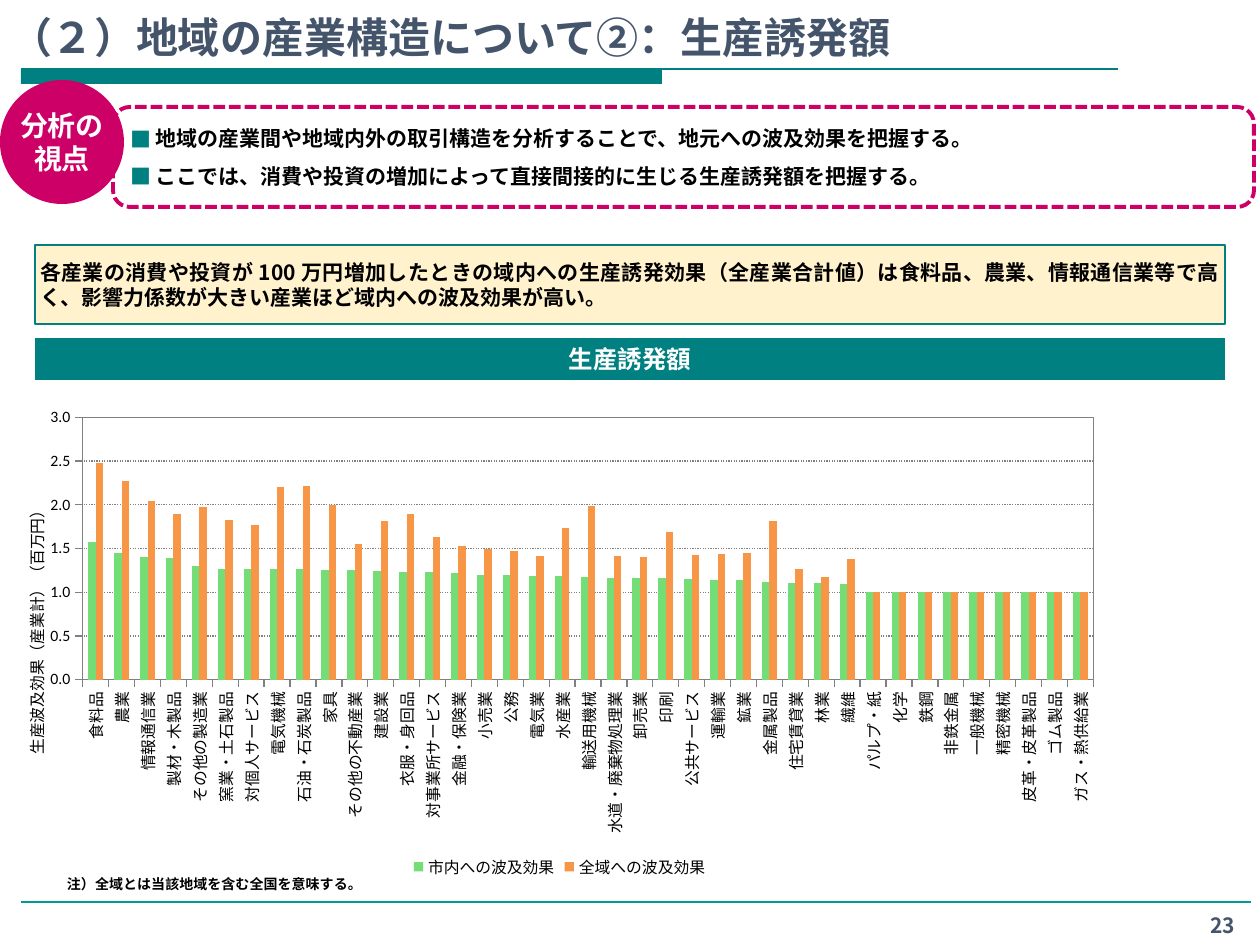
import lxml.etree
import pptx
import pptx.chart.data
import pptx.dml.color
import pptx.enum.chart
import pptx.enum.dml
import pptx.enum.shapes
import pptx.enum.text
import pptx.oxml.ns
import pptx.util

RGB = pptx.dml.color.RGBColor
Align = pptx.enum.text.PP_ALIGN
Anchor = pptx.enum.text.MSO_ANCHOR
Shape = pptx.enum.shapes.MSO_SHAPE
Dash = pptx.enum.dml.MSO_LINE
Pt = pptx.util.Pt
qn = pptx.oxml.ns.qn

TITLE = "（２）地域の産業構造について②：生産誘発額"
BADGE = "分析の\v視点"
VIEWPOINTS = [
    "地域の産業間や地域内外の取引構造を分析することで、地元への波及効果を把握する。",
    "ここでは、消費や投資の増加によって直接間接的に生じる生産誘発額を把握する。",
]
FINDING = ("各産業の消費や投資が100万円増加したときの域内への生産誘発効果（全産業合計値）は"
           "食料品、農業、情報通信業等で高く、影響力係数が大きい産業ほど域内への波及効果が高い。")
CHART_HEADING = "生産誘発額"
FOOTNOTE = "注）全域とは当該地域を含む全国を意味する。"
PAGE_NUMBER = "23"
AXIS_TITLE = "生産波及効果（産業計）（百万円）"
SERIES_NAMES = ["市内への波及効果", "全域への波及効果"]
INDUSTRIES = [
    ("食料品", 1.58, 2.48), ("農業", 1.45, 2.27), ("情報通信業", 1.40, 2.04),
    ("製材・木製品", 1.39, 1.90), ("その他の製造業", 1.30, 1.97), ("窯業・土石製品", 1.27, 1.83),
    ("対個人サービス", 1.27, 1.77), ("電気機械", 1.27, 2.20), ("石油・石炭製品", 1.26, 2.21),
    ("家具", 1.25, 2.00), ("その他の不動産業", 1.25, 1.55), ("建設業", 1.24, 1.82),
    ("衣服・身回品", 1.23, 1.89), ("対事業所サービス", 1.23, 1.63), ("金融・保険業", 1.22, 1.53),
    ("小売業", 1.20, 1.49), ("公務", 1.20, 1.47), ("電気業", 1.19, 1.41),
    ("水産業", 1.19, 1.73), ("輸送用機械", 1.17, 1.99), ("水道・廃棄物処理業", 1.16, 1.41),
    ("卸売業", 1.16, 1.40), ("印刷", 1.16, 1.69), ("公共サービス", 1.15, 1.43),
    ("運輸業", 1.14, 1.44), ("鉱業", 1.14, 1.45), ("金属製品", 1.12, 1.82),
    ("住宅賃貸業", 1.11, 1.26), ("林業", 1.11, 1.17), ("繊維", 1.09, 1.38),
] + [(name, 1, 1) for name in (
    "パルプ・紙", "化学", "鉄鋼", "非鉄金属", "一般機械", "精密機械",
    "皮革・皮革製品", "ゴム製品", "ガス・熱供給業")]

FONT, CHART_FONT = "Noto Sans CJK JP", "Calibri"
TEAL, RULE_TEAL = RGB(0, 0x80, 0x80), RGB(0, 0x99, 0x99)
PINK, CREAM = RGB(0xCC, 0, 0x66), RGB(0xFF, 0xF2, 0xCC)
SLATE, GRAY = RGB(0x44, 0x54, 0x6A), RGB(0x80, 0x80, 0x80)
BLACK, WHITE = RGB(0, 0, 0), RGB(0xFF, 0xFF, 0xFF)
SERIES_COLORS = [RGB(0x75, 0xDD, 0x75), RGB(0xF7, 0x96, 0x46)]


def px(count):
    return round(count * 914400 / 126)


def write(box, *texts, size, color=BLACK, align=Align.LEFT, anchor=Anchor.TOP,
          margins=(13, 6), wrap=True, bullet=None):
    """Fill a box with bold paragraphs; margins are (sides, top and bottom) in px."""
    frame = box.text_frame
    frame.auto_size = pptx.enum.text.MSO_AUTO_SIZE.NONE
    frame.word_wrap, frame.vertical_anchor = wrap, anchor
    frame.margin_left = frame.margin_right = px(margins[0])
    frame.margin_top = frame.margin_bottom = px(margins[1])
    for index, text in enumerate(texts):
        para = frame.add_paragraph() if index else frame.paragraphs[0]
        para.text, para.alignment = text, align
        if bullet:
            add_bullet(para, bullet)
            para.space_before, para.space_after = Pt(3 if index else 0), Pt(4)
        for span in para.runs:
            span.font.size, span.font.bold = Pt(size), True
            span.font.name, span.font.color.rgb = FONT, color
            latin = span._r.get_or_add_rPr().find(qn("a:latin"))
            east_asian = lxml.etree.Element(qn("a:ea"), typeface=FONT)
            latin.addnext(east_asian)


def add_bullet(para, bullet):
    properties = para._p.get_or_add_pPr()
    properties.set("marL", str(px(25)))
    properties.set("indent", str(-px(25)))
    color = lxml.etree.SubElement(properties, qn("a:buClr"))
    lxml.etree.SubElement(color, qn("a:srgbClr"), val=str(TEAL))
    lxml.etree.SubElement(properties, qn("a:buFont"), typeface=FONT)
    lxml.etree.SubElement(properties, qn("a:buChar"), char=bullet)


def add_block(page, kind, place, fill=None, line=None, width=1, dash=None):
    block = page.shapes.add_shape(kind, *map(px, place))
    block.shadow.inherit = False
    if fill is None:
        block.fill.background()
    else:
        block.fill.solid()
        block.fill.fore_color.rgb = fill
    if line is None:
        block.line.fill.background()
    else:
        block.line.color.rgb, block.line.width = line, Pt(width)
        if dash:
            block.line.dash_style = dash
    return block


def add_rule(page, left, right, y, color):
    rule = page.shapes.add_connector(
        pptx.enum.shapes.MSO_CONNECTOR.STRAIGHT, px(left), px(y), px(right), px(y))
    rule.line.color.rgb, rule.line.width = color, Pt(0.75)
    lxml.etree.SubElement(rule._element.spPr, qn("a:effectLst"))


def set_layout(parent, index, **values):
    """Give a chart part a manual layout, as child number index if it has none."""
    layout = parent.find(qn("c:layout"))
    if layout is None:
        layout = lxml.etree.Element(qn("c:layout"))
        parent.insert(index, layout)
    manual = lxml.etree.SubElement(layout, qn("c:manualLayout"))
    for name, value in values.items():
        lxml.etree.SubElement(manual, qn("c:" + name), val=str(value))


def add_effect_chart(page, place):
    data = pptx.chart.data.CategoryChartData(number_format="0.00")
    names, *columns = zip(*INDUSTRIES)
    data.categories = names
    for name, values in zip(SERIES_NAMES, columns):
        data.add_series(name, values)
    kinds = pptx.enum.chart
    chart = page.shapes.add_chart(
        kinds.XL_CHART_TYPE.COLUMN_CLUSTERED, *map(px, place), data).chart
    chart.has_title = False
    chart.font.name, chart.font.size, chart.font.color.rgb = CHART_FONT, Pt(10), BLACK
    chart.has_legend = True
    chart.legend.position = kinds.XL_LEGEND_POSITION.BOTTOM
    chart.legend.include_in_layout = False
    chart.legend.font.size = Pt(9)

    plot = chart.plots[0]
    plot.gap_width, plot.overlap, plot.vary_by_categories = 150, 0, False
    for series, color in zip(plot.series, SERIES_COLORS):
        series.format.fill.solid()
        series.format.fill.fore_color.rgb = color

    category, value = chart.category_axis, chart.value_axis
    for axis in (category, value):
        axis.major_tick_mark = kinds.XL_TICK_MARK.OUTSIDE
        axis.tick_labels.font.size = Pt(9)
        axis.format.line.color.rgb, axis.format.line.width = GRAY, Pt(0.75)
    category._element.find(qn("c:txPr")).find(qn("a:bodyPr")).set("rot", "-5400000")
    skip = lxml.etree.Element(qn("c:tickLblSkip"), val="1")
    category._element.find(qn("c:noMultiLvlLbl")).addprevious(skip)

    value.minimum_scale, value.maximum_scale, value.major_unit = 0, 3, 0.5
    value.tick_labels.number_format = "0.0;0.0"
    value.tick_labels.number_format_is_linked = False
    grid = value.major_gridlines.format.line
    grid.color.rgb, grid.width, grid.dash_style = GRAY, Pt(0.75), Dash.ROUND_DOT
    para = value.axis_title.text_frame.paragraphs[0]
    span = para.add_run()
    span.text = AXIS_TITLE
    span.font.size, span.font.bold, span.font.name = Pt(9), False, CHART_FONT
    set_layout(value.axis_title._element, 1, xMode="edge", yMode="edge", x=0.01, y=0.21)

    area = chart._chartSpace.chart.plotArea
    set_layout(area, 0, layoutTarget="inner", xMode="edge", yMode="edge",
               x=0.067, y=0.04, w=0.918, h=0.541)
    frame = lxml.etree.SubElement(area, qn("c:spPr"))
    lxml.etree.SubElement(frame, qn("a:noFill"))
    border = lxml.etree.SubElement(frame, qn("a:ln"), w=str(Pt(0.75)))
    fill = lxml.etree.SubElement(border, qn("a:solidFill"))
    lxml.etree.SubElement(fill, qn("a:srgbClr"), val=str(GRAY))


def main():
    deck = pptx.Presentation()
    deck.slide_width, deck.slide_height = px(1260), px(945)
    page = deck.slides.add_slide(deck.slide_layouts[5])

    title = page.shapes.title
    title.left, title.top, title.width, title.height = map(px, (-3, 0, 1263, 68))
    write(title, TITLE, size=24, color=SLATE, anchor=Anchor.BOTTOM)
    add_block(page, Shape.RECTANGLE, (21, 69, 641, 15), fill=TEAL)
    add_rule(page, 21, 1118, 69, TEAL)
    add_rule(page, 21, 1251, 902, RULE_TEAL)

    add_effect_chart(page, (9, 398, 1101, 485))

    heading = add_block(page, Shape.RECTANGLE, (35, 338, 1190, 42), fill=TEAL)
    write(heading, CHART_HEADING, size=14, color=WHITE, align=Align.CENTER, anchor=Anchor.MIDDLE)
    finding = add_block(page, Shape.RECTANGLE, (35, 245, 1190, 79), fill=CREAM, line=TEAL)
    write(finding, FINDING, size=12, align=Align.JUSTIFY, anchor=Anchor.MIDDLE, margins=(5, 6))

    footnote = page.shapes.add_textbox(*map(px, (54, 870, 353, 30)))
    write(footnote, FOOTNOTE, size=8)
    number = page.shapes.add_textbox(*map(px, (1185, 907, 75, 36)))
    write(number, PAGE_NUMBER, size=12, color=SLATE, align=Align.CENTER)

    viewpoints = add_block(page, Shape.ROUNDED_RECTANGLE, (113, 107, 1141, 100),
                           line=PINK, width=2.25, dash=Dash.SQUARE_DOT)
    write(viewpoints, *VIEWPOINTS, size=12, align=Align.JUSTIFY, anchor=Anchor.MIDDLE, bullet="■")
    badge = add_block(page, Shape.OVAL, (0, 80, 124, 124), fill=PINK)
    write(badge, BADGE, size=16, color=WHITE, align=Align.CENTER, anchor=Anchor.MIDDLE,
          margins=(5, 6), wrap=False)

    deck.save("out.pptx")


if __name__ == "__main__":
    main()
